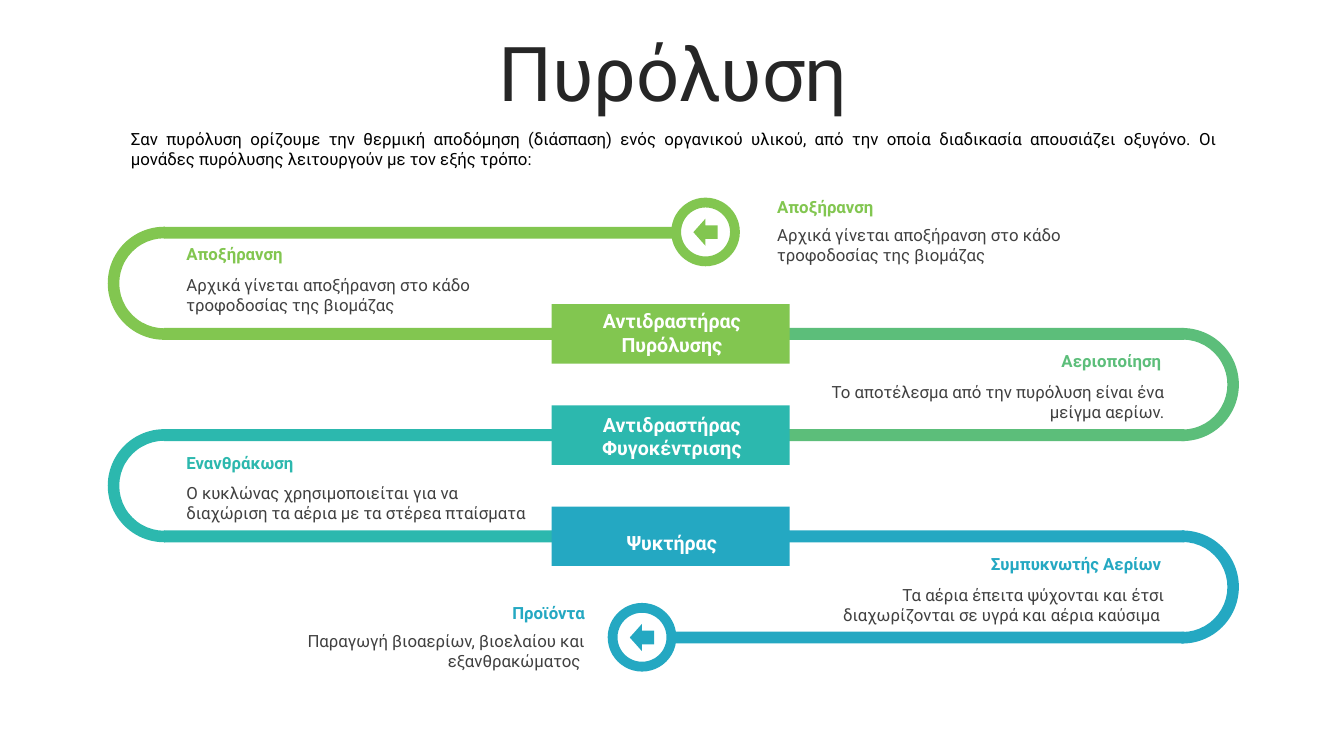
from pptx import Presentation
from pptx.dml import color
from pptx.enum import shapes, text
from pptx.util import Pt

COLORS = {
    "lime": "82C650",
    "green": "5CBE7A",
    "teal": "2CB8AE",
    "blue": "24A8C2",
    "title": "262626",
    "body": "404040",
    "white": "FFFFFF",
    "black": "000000",
}
LEFT, RIGHT = text.PP_ALIGN.LEFT, text.PP_ALIGN.RIGHT
CENTER, JUSTIFY = text.PP_ALIGN.CENTER, text.PP_ALIGN.JUSTIFY
TOP, MIDDLE = text.MSO_ANCHOR.TOP, text.MSO_ANCHOR.MIDDLE
TRACK_TOP, PITCH = 162, 72.3
ARC, BAR = 80.8, 8.5
ARC_ANGLES = {"left": (53.49, 162.34), "right": (161.66, 54.51)}


def rgb(name):
    return color.RGBColor.from_string(COLORS[name])


def apply(target, values):
    for name, value in values.items():
        setattr(target, name, value)


def add_solid(s, kind, box, fill):
    sp = s.shapes.add_shape(kind, *map(Pt, box))
    sp.shadow.inherit = False
    sp.fill.solid()
    sp.fill.fore_color.rgb = rgb(fill)
    sp.line.fill.background()
    return sp


def add_text(s, box, words, fill, size=12, bold=False, align=LEFT, anchor=TOP, **spacing):
    tf = s.shapes.add_textbox(*map(Pt, box)).text_frame
    apply(tf, {"word_wrap": True, "vertical_anchor": anchor})
    p = tf.paragraphs[0]
    apply(p, {"alignment": align, **spacing})
    r = p.add_run()
    r.text = words
    apply(r.font, {"name": "Roboto", "size": Pt(size), "bold": bold})
    r.font.color.rgb = rgb(fill)


def add_track(s, row, side, fill, top_end, bottom_end):
    top = TRACK_TOP + row * PITCH
    arc_left, bar_start = (77, 117) if side == "left" else (804.2, 846)
    arc = add_solid(s, shapes.MSO_SHAPE.BLOCK_ARC, (arc_left, top, ARC, ARC), fill)
    for i, angle in enumerate(ARC_ANGLES[side]):
        arc.adjustments[i] = angle
    arc.adjustments[2] = 0.102
    for y, end in ((top, top_end), (top + PITCH, bottom_end)):
        box = (min(bar_start, end), y, abs(end - bar_start), BAR)
        add_solid(s, shapes.MSO_SHAPE.RECTANGLE, box, fill)


def add_stage(s, index, fill, words):
    top = 217.2 + index * 72.3
    add_solid(s, shapes.MSO_SHAPE.RECTANGLE, (394, top, 170, 42.5), fill)
    offset = (0, 1.7, 5.3)[index]
    add_text(s, (412, top + offset, 136, 41), words, "white", 14, True, CENTER, MIDDLE)


def add_endpoint(s, left, top, fill):
    ring = s.shapes.add_shape(shapes.MSO_SHAPE.OVAL, *map(Pt, (left, top, 42, 42)))
    ring.shadow.inherit = False
    ring.fill.background()
    ring.line.color.rgb = rgb(fill)
    ring.line.width = Pt(7)
    arrow = (left + 12.3, top + 11.5, 17.3, 19.4)
    add_solid(s, shapes.MSO_SHAPE.LEFT_ARROW, arrow, fill)


def add_caption(s, left, top, widths, gap, fill, heading, body, align):
    add_text(s, (left, top, widths[0], 21.6), heading, fill, bold=True, align=align)
    add_text(s, (left, top + gap, widths[1], 36), body, "body", align=align)


def main():
    prs = Presentation()
    apply(prs, {"slide_width": Pt(960), "slide_height": Pt(540)})
    s = prs.slides.add_slide(prs.slide_layouts[6])

    add_text(s, (25.2, 26.6, 911.5, 56.9), "Πυρόλυση", "title", 54,
             align=CENTER, anchor=MIDDLE, line_spacing=0.9, space_before=Pt(10))
    add_text(s, (86.4, 88.6, 790.6, 36),
             "Σαν πυρόλυση ορίζουμε την θερμική αποδόμηση (διάσπαση) ενός οργανικού υλικού, "
             "από την οποία διαδικασία απουσιάζει οξυγόνο. Οι μονάδες πυρόλυσης λειτουργούν "
             "με τον εξής τρόπο:", "black", align=JUSTIFY)

    for track in (
        (0, "left", "lime", 481, 401),
        (2, "left", "teal", 401, 401),
        (1, "right", "green", 562, 562),
        (3, "right", "blue", 562, 478),
    ):
        add_track(s, *track)

    for i, (fill, words) in enumerate((
        ("lime", "Αντιδραστήρας Πυρόλυσης"),
        ("teal", "Αντιδραστήρας Φυγοκέντρισης"),
        ("blue", "Ψυκτήρας"),
    )):
        add_stage(s, i, fill, words)

    add_endpoint(s, 483, 144.7, "lime")
    add_endpoint(s, 437.6, 434.2, "blue")

    drying = ("lime", "Αποξήρανση",
              "Αρχικά γίνεται αποξήρανση στο κάδο τροφοδοσίας της βιομάζας")
    for caption in (
        (126, 170.8, (253, 255.6), 22, *drying, LEFT),
        (126, 319.7, (256, 258.5), 21.8, "teal", "Ενανθράκωση",
         "O κυκλώνας χρησιμοποιείται για να διαχώριση τα αέρια με τα στέρεα πταίσματα", LEFT),
        (580.3, 247, (256.3, 258.5), 21.8, "green", "Αεριοποίηση",
         "Το αποτέλεσμα από την πυρόλυση είναι ένα μείγμα αερίων.", RIGHT),
        (577.4, 391.9, (259.2, 261.4), 22, "blue", "Συμπυκνωτής Αερίων",
         "Τα αέρια έπειτα ψύχονται και έτσι διαχωρίζονται σε υγρά και αέρια καύσιμα ", RIGHT),
        (193, 427, (231.8, 231.8), 20.2, "blue", "Προϊόντα",
         "Παραγωγή βιοαερίων, βιοελαίου και εξανθρακώματος ", RIGHT),
        (548, 136.8, (232.6, 232.6), 20.2, *drying, LEFT),
    ):
        add_caption(s, *caption)

    prs.save("out.pptx")


if __name__ == "__main__":
    main()
